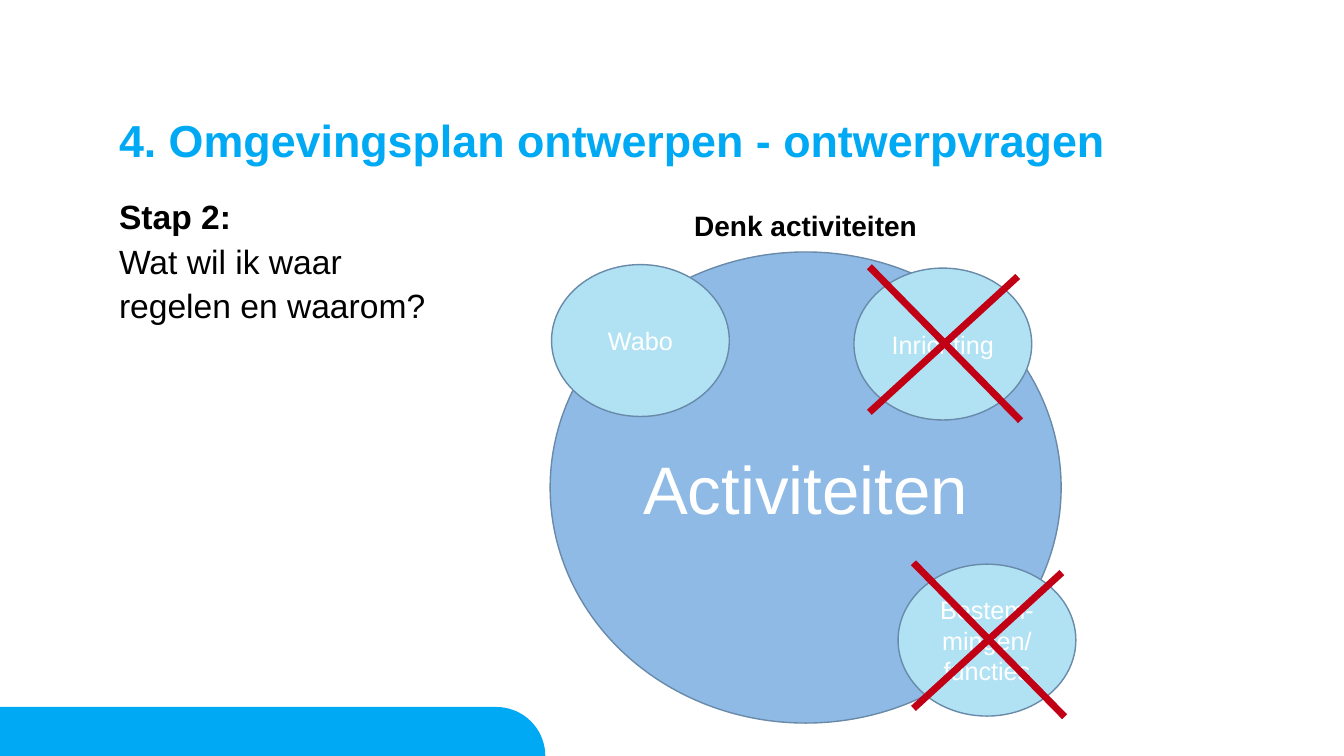
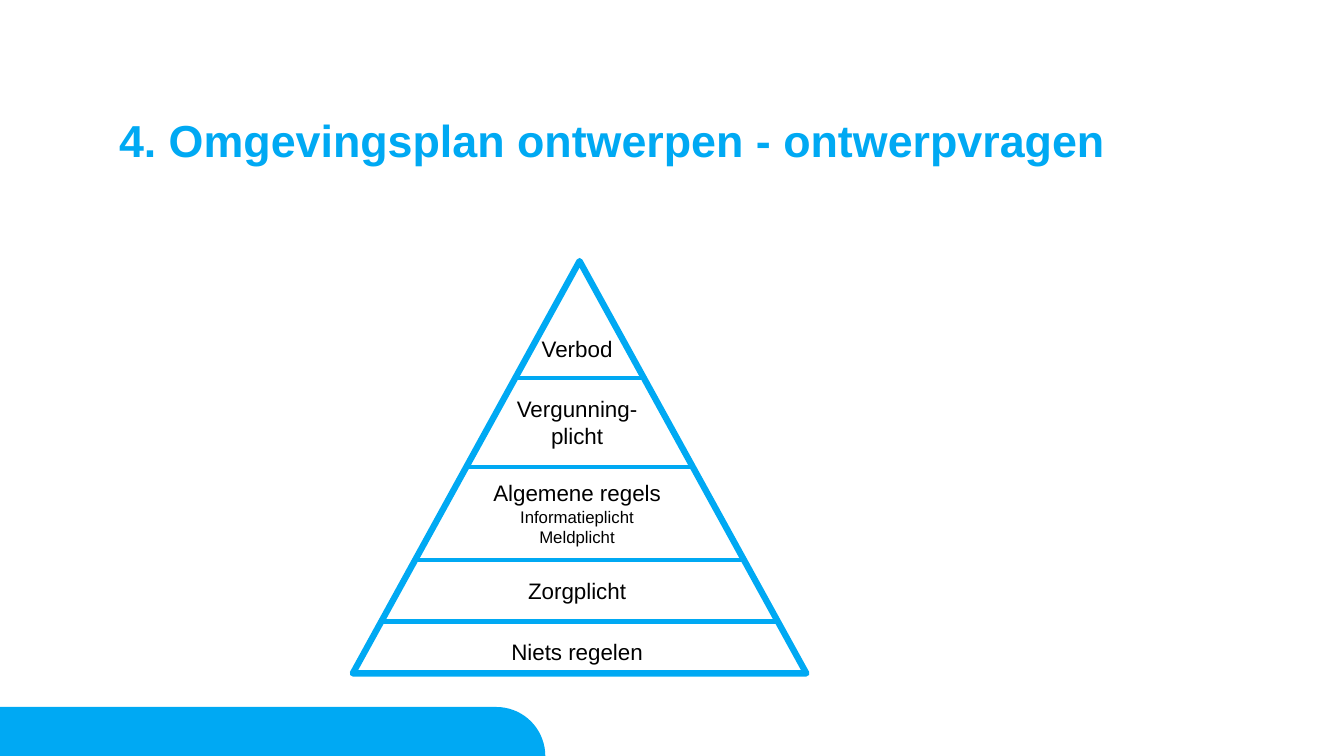
"""Build two slides on designing an omgevingsplan: activities and the rule pyramid."""
from dataclasses import dataclass
from math import cos, radians, sin

from lxml.etree import SubElement
from pptx import Presentation
from pptx.dml.color import RGBColor
from pptx.enum.shapes import MSO_CONNECTOR, MSO_SHAPE
from pptx.enum.text import MSO_ANCHOR, PP_ALIGN
from pptx.oxml.ns import qn
from pptx.util import Pt


@dataclass(frozen=True)
class Theme:
    font: str = "Arial"
    brand: str = "00A9F3"
    text: str = "000000"
    white: str = "FFFFFF"
    circle: str = "8EBAE5"
    bubble: str = "B1E2F4"
    outline: str = "698AA9"
    cross: str = "C20015"
    title_size: int = 32
    body_size: int = 24
    caption_size: int = 20
    circle_size: int = 48
    bubble_size: int = 18
    label_size: int = 16
    detail_size: int = 12


THEME = Theme()
SLIDE_WIDTH, SLIDE_HEIGHT = 960, 540
TITLE = "4. Omgevingsplan ontwerpen - ontwerpvragen"
TITLE_BOX = (85, 85, 790, 57)
BAND_WIDTH, BAND_HEIGHT = 389.5, 35

QUESTION = ["Stap 2:", "Wat wil ik waar", "regelen en waarom?"]
QUESTION_BOX = (85, 143.5, 300, 120)
CAPTION = "Denk activiteiten"
CAPTION_BOX = (393, 146, 365, 30)
CIRCLE_TEXT = "Activiteiten"
CIRCLE_BOX = (393, 180, 365, 336.5)
BUBBLE_WIDTH, BUBBLE_HEIGHT = 127, 108.5
BUBBLES = [
    (["Wabo"], 394, 189, False),
    (["Inrichting"], 610, 191.5, True),
    (["Bestem-mingen/", "functies"], 641.5, 403, True),
]
CROSS_STROKES = [(11, 103, 117, 6), (11, -1, 119, 109)]

PYRAMID_BOX = (252, 186.5, 324, 294.5)
DIVIDERS = [270, 333.5, 400, 444]
LABEL_LEFT, LABEL_WIDTH = 304, 216.5
LABELS = [
    (236, 27, ["Verbod"], []),
    (278.5, 46, ["Vergunning-", "plicht"], []),
    (339, 55, ["Algemene regels"], ["Informatieplicht", "Meldplicht"]),
    (409, 27, ["Zorgplicht"], []),
    (452.5, 27, ["Niets regelen"], []),
]


def points(values):
    return [Pt(value) for value in values]


def color(value):
    return RGBColor.from_string(value)


def paint(shape, fill, line=None, width=1):
    shape.shadow.inherit = False
    shape.fill.solid()
    shape.fill.fore_color.rgb = color(fill)
    if line:
        shape.line.color.rgb = color(line)
        shape.line.width = Pt(width)
    else:
        shape.line.fill.background()


def write(shape, lines, ink, align=PP_ALIGN.CENTER, anchor=MSO_ANCHOR.MIDDLE,
          spacing=None, gap=0):
    """Fill a shape with (text, size, bold) lines."""
    frame = shape.text_frame
    frame.word_wrap = True
    frame.vertical_anchor = anchor
    for index, (text, size, bold) in enumerate(lines):
        paragraph = frame.add_paragraph() if index else frame.paragraphs[0]
        paragraph.text = text
        paragraph.alignment = align
        if spacing:
            paragraph.line_spacing = spacing
        if index and gap:
            paragraph.space_before = Pt(gap)
        font = paragraph.font
        font.name, font.size, font.bold = THEME.font, Pt(size), bold
        font.color.rgb = color(ink)
    return frame


def add_text(slide, box, lines, **options):
    textbox = slide.shapes.add_textbox(*points(box))
    return write(textbox, lines, **options)


def add_flush_text(slide, box, lines, ink, gap=0):
    frame = add_text(slide, box, lines, ink=ink, align=PP_ALIGN.LEFT,
                     anchor=MSO_ANCHOR.TOP, spacing=0.9, gap=gap)
    frame.margin_left = frame.margin_right = 0
    frame.margin_top = frame.margin_bottom = 0


def add_line(slide, ends, ink, width):
    line = slide.shapes.add_connector(MSO_CONNECTOR.STRAIGHT, *points(ends))
    line.line.color.rgb = color(ink)
    line.line.width = Pt(width)
    SubElement(line._element.spPr, qn("a:effectLst"))


def add_ellipse(slide, box, lines, fill):
    ellipse = slide.shapes.add_shape(MSO_SHAPE.OVAL, *points(box))
    paint(ellipse, fill, THEME.outline)
    write(ellipse, lines, THEME.white)


def add_band(slide):
    top = SLIDE_HEIGHT - BAND_HEIGHT
    center = BAND_WIDTH - BAND_HEIGHT
    corner = [(Pt(center + BAND_HEIGHT * sin(radians(angle))),
               Pt(SLIDE_HEIGHT - BAND_HEIGHT * cos(radians(angle))))
              for angle in range(0, 91, 5)]
    builder = slide.shapes.build_freeform(0, Pt(SLIDE_HEIGHT))
    builder.add_line_segments([(0, Pt(top)), *corner], close=True)
    paint(builder.convert_to_shape(), THEME.brand)


def add_base_slide(presentation):
    slide = presentation.slides.add_slide(presentation.slide_layouts[6])
    add_band(slide)
    add_flush_text(slide, TITLE_BOX, [(TITLE, THEME.title_size, True)], THEME.brand)
    return slide


def build_activities(presentation):
    slide = add_base_slide(presentation)
    question = [(text, THEME.body_size, index == 0) for index, text in enumerate(QUESTION)]
    add_flush_text(slide, QUESTION_BOX, question, THEME.text, gap=5.8)
    add_text(slide, CAPTION_BOX, [(CAPTION, THEME.caption_size, True)], ink=THEME.text)
    add_ellipse(slide, CIRCLE_BOX, [(CIRCLE_TEXT, THEME.circle_size, False)], THEME.circle)
    for texts, left, top, crossed in BUBBLES:
        lines = [(text, THEME.bubble_size, False) for text in texts]
        add_ellipse(slide, (left, top, BUBBLE_WIDTH, BUBBLE_HEIGHT), lines, THEME.bubble)
        if crossed:
            for x1, y1, x2, y2 in CROSS_STROKES:
                add_line(slide, (left + x1, top + y1, left + x2, top + y2), THEME.cross, 5)


def build_pyramid(presentation):
    slide = add_base_slide(presentation)
    left, top, width, height = PYRAMID_BOX
    pyramid = slide.shapes.add_shape(MSO_SHAPE.ISOSCELES_TRIANGLE, *points(PYRAMID_BOX))
    paint(pyramid, THEME.white, THEME.brand, 4.5)
    center = left + width / 2
    for y in DIVIDERS:
        reach = width / 2 * (y - top) / height
        add_line(slide, (center - reach, y, center + reach, y), THEME.brand, 3)
    for label_top, label_height, texts, details in LABELS:
        lines = [(text, THEME.label_size, False) for text in texts]
        lines += [(text, THEME.detail_size, False) for text in details]
        add_text(slide, (LABEL_LEFT, label_top, LABEL_WIDTH, label_height), lines,
                 ink=THEME.text, anchor=MSO_ANCHOR.TOP)


def main():
    presentation = Presentation()
    presentation.slide_width = Pt(SLIDE_WIDTH)
    presentation.slide_height = Pt(SLIDE_HEIGHT)
    build_activities(presentation)
    build_pyramid(presentation)
    presentation.save("out.pptx")


if __name__ == "__main__":
    main()
